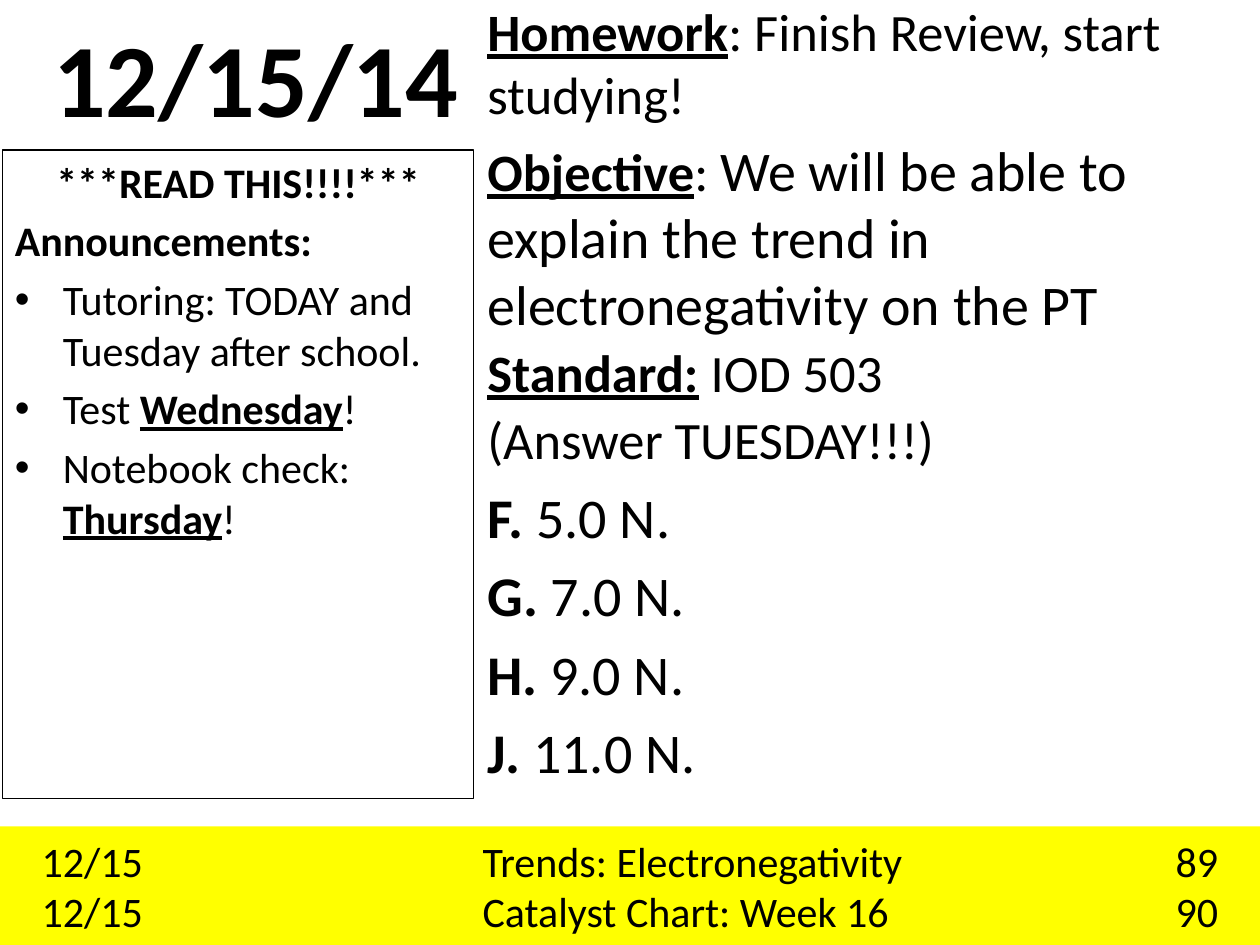
from dataclasses import dataclass

from lxml import etree
from pptx import Presentation
from pptx.dml.color import RGBColor
from pptx.enum.shapes import MSO_SHAPE
from pptx.enum.text import MSO_ANCHOR, PP_ALIGN
from pptx.oxml.ns import qn
from pptx.util import Inches, Pt

RECTANGLE = MSO_SHAPE.RECTANGLE
MIDDLE, TOP = MSO_ANCHOR.MIDDLE, MSO_ANCHOR.TOP
LEFT, CENTER = PP_ALIGN.LEFT, PP_ALIGN.CENTER


@dataclass(frozen=True)
class Theme:
    font: str = "Calibri"
    ink: RGBColor = RGBColor(0, 0, 0)
    highlight: RGBColor = RGBColor(255, 255, 0)
    title: float = 59.4
    large: float = 32
    medium: float = 30
    small: float = 24
    gap: float = 0.2  # paragraph gap as a share of the type size


THEME = Theme()


def prepare_frame(shape, anchor=TOP):
    frame = shape.text_frame
    frame.word_wrap = True
    frame.vertical_anchor = anchor
    return frame


def add_box(slide, box):
    shape = slide.shapes.add_shape(RECTANGLE, *box)
    shape.shadow.inherit = False
    shape.fill.background()
    shape.line.fill.background()
    return shape


def next_paragraph(frame):
    first = frame.paragraphs[0]
    return frame.add_paragraph() if first.runs else first


def write(frame, pieces, size, align=LEFT, gap=THEME.gap):
    """Add a paragraph of (text, style[, size]); style holds b and/or u."""
    paragraph = next_paragraph(frame)
    paragraph.alignment = align
    paragraph.space_before = Pt(size * gap)
    for text, style, *own_size in pieces:
        run = paragraph.add_run()
        run.text = text
        font = run.font
        font.name = THEME.font
        font.size = Pt(own_size[0] if own_size else size)
        font.color.rgb = THEME.ink
        font.bold = "b" in style
        font.underline = "u" in style
    return paragraph


def add_bullet(paragraph, indent):
    properties = paragraph._p.get_or_add_pPr()
    properties.set("marL", str(indent))
    properties.set("indent", str(-indent))
    etree.SubElement(properties, qn("a:buFont"), typeface="Arial")
    etree.SubElement(properties, qn("a:buChar"), char="•")


def add_tab_stops(paragraph, positions):
    stops = etree.SubElement(paragraph._p.get_or_add_pPr(), qn("a:tabLst"))
    for position in positions:
        etree.SubElement(stops, qn("a:tab"), pos=str(position), algn="l")


def add_date(slide, box):
    frame = prepare_frame(slide.shapes.add_textbox(*box), MIDDLE)
    write(frame, [("12/15/14", "b")], THEME.title, CENTER, gap=0)


def add_announcements(slide, box):
    panel = add_box(slide, box)
    panel.line.color.rgb = THEME.ink
    panel.line.width = Pt(0.75)
    frame = prepare_frame(panel)
    write(frame, [("***READ THIS!!!!***", "b")], THEME.small, CENTER)
    write(frame, [("Announcements:", "b")], THEME.small)
    notices = [
        [("Tutoring: TODAY and Tuesday after school.", "")],
        [("Test ", ""), ("Wednesday", "bu"), ("!", "")],
        [("Notebook check: ", ""), ("Thursday", "bu"), ("!", "")],
    ]
    for notice in notices:
        add_bullet(write(frame, notice, THEME.small), Inches(0.38))


def add_lesson(slide, box):
    frame = prepare_frame(slide.shapes.add_textbox(*box))
    write(frame, [("Homework", "bu"), (": Finish Review, start studying!", "")],
          THEME.medium)
    goal = "We will be able to explain the trend in electronegativity on the PT"
    write(frame, [("Objective", "bu"), (": ", ""), (goal, "", THEME.large)],
          THEME.medium)
    # Standard and question
    for pieces in ([("Standard:", "bu"), (" IOD 503", "")],
                   [("(Answer TUESDAY!!!)", "")]):
        write(frame, pieces, THEME.medium).line_spacing = 0.9
    # Answer choices
    for letter, force in zip("FGHJ", ("5.0", "7.0", "9.0", "11.0")):
        write(frame, [(f"{letter}. ", "b"), (f"{force} N.", "")], THEME.large)


def add_contents_bar(slide, box):
    bar = add_box(slide, box)
    bar.fill.solid()
    bar.fill.fore_color.rgb = THEME.highlight
    frame = prepare_frame(bar, MIDDLE)
    frame.margin_left = Inches(0.33)
    entries = [("12/15", "Trends: Electronegativity", "89"),
               ("12/15", "Catalyst Chart: Week 16", "90")]
    for entry in entries:
        line = write(frame, [("\t".join(entry), "")], THEME.small, gap=0)
        add_tab_stops(line, (Inches(3.5), Inches(9)))


def inches(*lengths):
    return [Inches(length) for length in lengths]


def main():
    deck = Presentation()
    deck.slide_width, deck.slide_height = inches(10, 7.5)
    slide = deck.slides.add_slide(deck.slide_layouts[6])
    add_date(slide, inches(-0.47, 0.02, 5, 1.17))
    add_announcements(slide, inches(0.02, 1.19, 3.74, 5.15))
    add_lesson(slide, inches(3.77, -0.06, 6.23, 6.86))
    add_contents_bar(slide, inches(0, 6.56, 10, 0.94))
    deck.save("out.pptx")


if __name__ == "__main__":
    main()
